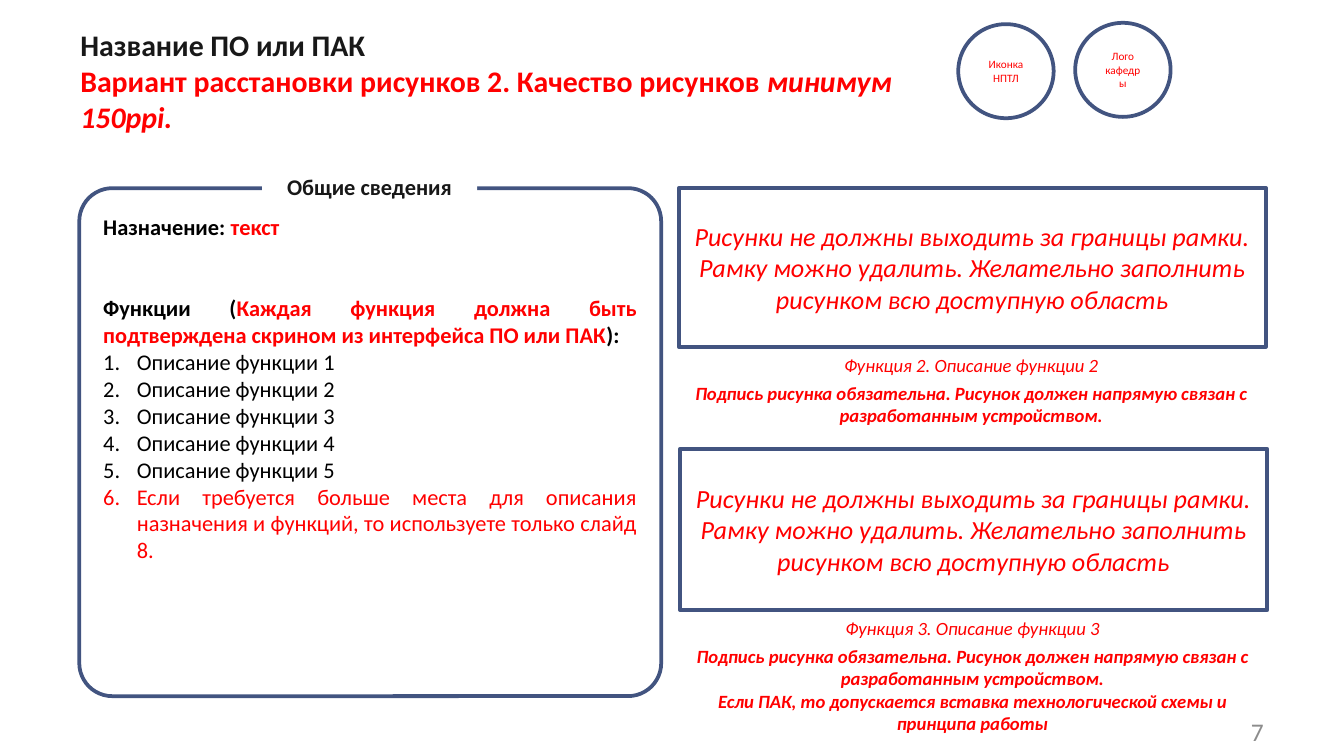
from lxml import etree
from pptx import Presentation
from pptx.dml.color import RGBColor
from pptx.enum.shapes import MSO_SHAPE
from pptx.enum.text import MSO_ANCHOR, PP_ALIGN
from pptx.oxml.ns import qn
from pptx.util import Inches, Pt

RECTANGLE = MSO_SHAPE.RECTANGLE
ROUNDED = MSO_SHAPE.ROUNDED_RECTANGLE
OVAL = MSO_SHAPE.OVAL
TOP, MIDDLE = MSO_ANCHOR.TOP, MSO_ANCHOR.MIDDLE
LEFT, CENTER, RIGHT, JUSTIFY = PP_ALIGN.LEFT, PP_ALIGN.CENTER, PP_ALIGN.RIGHT, PP_ALIGN.JUSTIFY

RED = RGBColor(0xFF, 0x00, 0x00)
BLACK = RGBColor(0x00, 0x00, 0x00)
DARK = RGBColor(0x18, 0x18, 0x18)
GRAY = RGBColor(0x8C, 0x8C, 0x8C)
WHITE = RGBColor(0xFF, 0xFF, 0xFF)
BLUE = RGBColor(0x42, 0x54, 0x80)

SLIDE_WIDTH = 10
SLIDE_HEIGHT = SLIDE_WIDTH * 9 / 16
FONT = "Calibri"
LINE_BREAK = "\v"
FRAME_TEXT = (
    "Рисунки не должны выходить за границы рамки. Рамку можно удалить. "
    "Желательно заполнить рисунком всю доступную область"
)
CAPTION_RULE = "Подпись рисунка обязательна. Рисунок должен напрямую связан с разработанным устройством."
SCHEME_RULE = "Если ПАК, то допускается вставка технологической схемы и принципа работы"


def set_values(target, values):
    for name, value in values.items():
        setattr(target, name, value)


def add_runs(paragraph, runs, size):
    for text, color, styles in runs:
        if text == LINE_BREAK:
            paragraph.add_line_break()
            continue
        run = paragraph.add_run()
        run.text = text
        run.font.color.rgb = color
        set_values(run.font, {"name": FONT, "size": Pt(size), "bold": False, "italic": False, **styles})


def number_paragraph(paragraph):
    properties = paragraph._p.get_or_add_pPr()
    properties.set("marL", str(Inches(0.25)))
    properties.set("indent", str(Inches(-0.25)))
    etree.SubElement(properties, qn("a:buAutoNum"), type="arabicPeriod")


def write(shape, paragraphs, size, alignment, anchor=TOP, wrap=True):
    frame = shape.text_frame
    set_values(frame, {"word_wrap": wrap, "vertical_anchor": anchor})
    for index, (runs, spacing) in enumerate(paragraphs):
        paragraph = frame.paragraphs[0] if index == 0 else frame.add_paragraph()
        set_values(paragraph, {"alignment": alignment, **spacing})
        add_runs(paragraph, runs, size)
    return frame


def add_text(slide, box, paragraphs, size, alignment, anchor=TOP):
    shape = slide.shapes.add_textbox(*map(Inches, box))
    return write(shape, paragraphs, size, alignment, anchor)


def add_panel(slide, kind, box, outlined=True):
    shape = slide.shapes.add_shape(kind, *map(Inches, box))
    shape.shadow.inherit = False
    shape.fill.solid()
    shape.fill.fore_color.rgb = WHITE
    if outlined:
        shape.line.color.rgb = BLUE
        shape.line.width = Pt(2)
    else:
        shape.line.fill.background()
    return shape


def add_title(slide):
    bold = {"bold": True}
    runs = [
        ("Название ПО или ПАК", DARK, bold),
        (LINE_BREAK, DARK, bold),
        ("Вариант расстановки рисунков 2. Качество рисунков ", RED, bold),
        ("минимум 150ppi.", RED, {"bold": True, "italic": True}),
    ]
    add_text(slide, (0.5, 0.15, 6.47, 0.7), [(runs, {})], 16, LEFT)


def add_overview(slide):
    bold = {"bold": True}
    add_panel(slide, ROUNDED, (0.59, 1.4, 4.33, 3.78)).adjustments[0] = 0.065
    functions = [(f"Описание функции {number}", BLACK) for number in range(1, 6)]
    functions.append(
        ("Если требуется больше места для описания назначения и функций, то используете только слайд 8.", RED)
    )
    paragraphs = [
        ([("Назначение: ", BLACK, bold), ("текст", RED, bold)], {"space_after": Pt(29)}),
        ([
            ("Функции (", BLACK, bold),
            ("Каждая функция должна быть подтверждена скрином из интерфейса ПО или ПАК", RED, bold),
            ("):", BLACK, bold),
        ], {}),
    ]
    paragraphs += [([(text, color, {})], {}) for text, color in functions]
    frame = add_text(slide, (0.67, 1.54, 4.17, 2.93), paragraphs, 12, JUSTIFY)
    for paragraph in frame.paragraphs[-len(functions):]:
        number_paragraph(paragraph)

    label = add_panel(slide, RECTANGLE, (1.95, 1.24, 1.6, 0.3), outlined=False)
    write(label, [([("Общие сведения", DARK, bold)], {})], 12, CENTER, wrap=False)


def add_figure(slide, number, left, top, height, caption_height, rules):
    italic = {"italic": True}
    frame = add_panel(slide, RECTANGLE, (left, top, 4.37, height))
    write(frame, [([(FRAME_TEXT, RED, italic)], {"space_after": Pt(3)})], 14, CENTER, MIDDLE)
    caption = f"Функция {number}. Описание функции {number}"
    paragraphs = [([(caption, RED, italic)], {"space_after": Pt(3)})]
    paragraphs += [([(rule, RED, {"italic": True, "bold": True})], {}) for rule in rules]
    add_text(slide, (left, top + height, 4.35, caption_height), paragraphs, 10, CENTER)


def add_badge(slide, left, top, lines):
    badge = add_panel(slide, OVAL, (left, top, 0.71, 0.7))
    write(badge, [([(line, RED, {})], {}) for line in lines], 6, CENTER, MIDDLE)


def main():
    presentation = Presentation()
    set_values(presentation, {"slide_width": Inches(SLIDE_WIDTH), "slide_height": Inches(SLIDE_HEIGHT)})
    slide = presentation.slides.add_slide(presentation.slide_layouts[6])
    add_title(slide)
    add_text(slide, (8.94, 5.29, 0.56, 0.3), [([("7", GRAY, {})], {})], 13.6, RIGHT, MIDDLE)
    add_overview(slide)
    add_figure(slide, 2, 5.05, 1.4, 1.18, 0.65, [CAPTION_RULE])
    add_figure(slide, 3, 5.06, 3.34, 1.2, 0.98, [CAPTION_RULE, SCHEME_RULE])
    add_badge(slide, 8, 0.17, ["Лого", "кафедры"])
    add_badge(slide, 7.13, 0.18, ["Иконка НПТЛ"])
    presentation.save("out.pptx")


if __name__ == "__main__":
    main()
